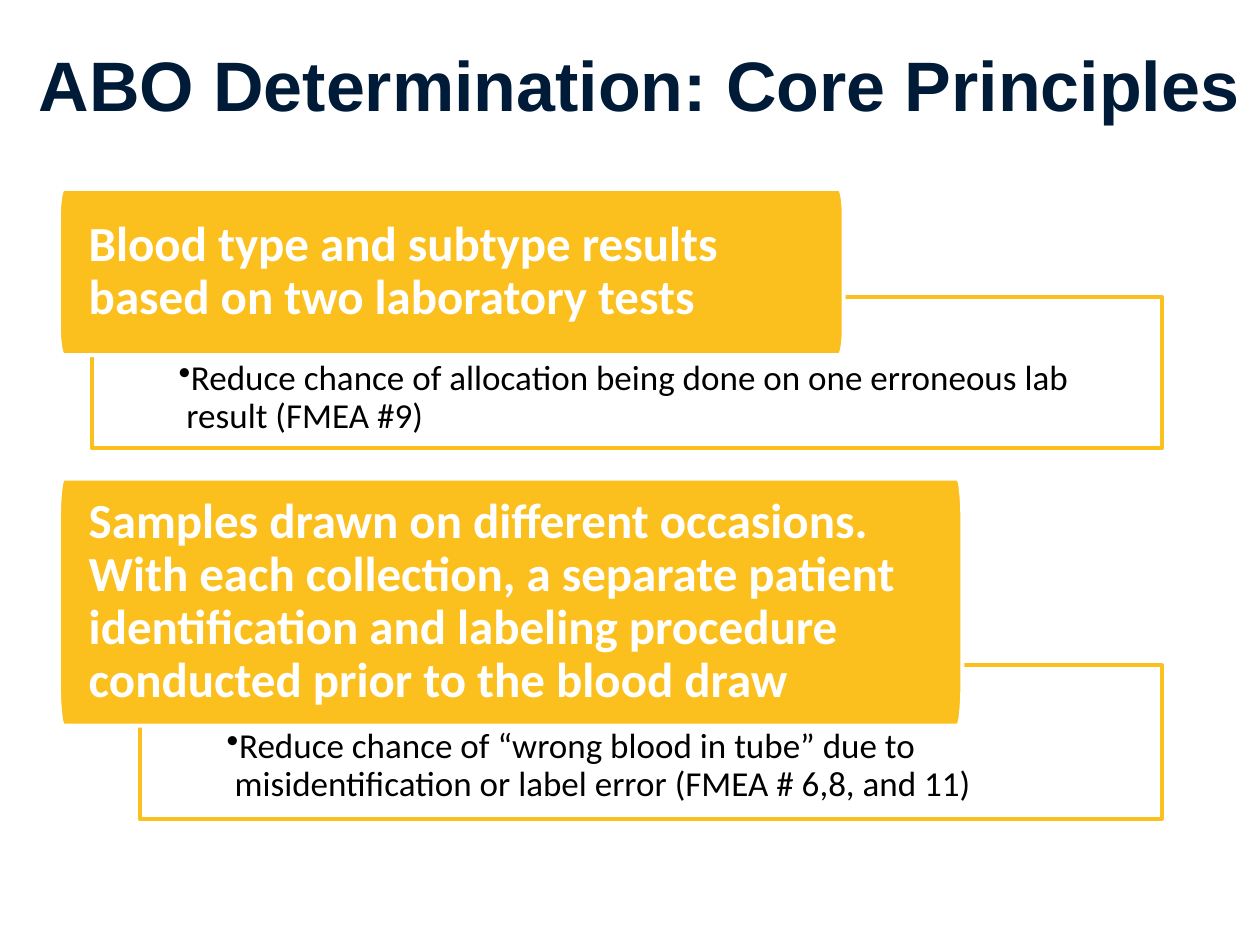
from math import cos, pi, sin

from lxml.etree import SubElement
from pptx import Presentation
from pptx.dml.color import RGBColor
from pptx.enum.shapes import MSO_SHAPE
from pptx.enum.text import MSO_ANCHOR, PP_ALIGN
from pptx.oxml.ns import qn
from pptx.util import Cm, Pt

NAVY, GOLD, WHITE, BLACK = "001B37", "FBC01E", "FFFFFF", "000000"
LEFT, RIGHT = 1.19, 23.42


def color(code):
    return RGBColor.from_string(code)


def write(shape, text, size, ink, font="Calibri", bold=False, bullet=False,
          anchor=MSO_ANCHOR.MIDDLE, pad=(0.25, 0.13, 0.25, 0.13), space=None):
    """Fill a shape with one paragraph; pad is left, top, right, bottom in cm."""
    frame = shape.text_frame
    frame.word_wrap = True
    frame.vertical_anchor = anchor
    (frame.margin_left, frame.margin_top,
     frame.margin_right, frame.margin_bottom) = map(Cm, pad)
    para = frame.paragraphs[0]
    para.text = text
    para.alignment = PP_ALIGN.LEFT
    if bullet:
        props = para._p.get_or_add_pPr()
        props.set("marL", str(Cm(0.16)))
        props.set("indent", str(Cm(-0.16)))
        SubElement(props, qn("a:buChar"), char="•")
    if space:
        para.line_spacing = space
    face = para.runs[0].font
    face.name, face.size, face.bold = font, Pt(size), bold
    face.color.rgb = color(ink)


class Deck:
    def __init__(self):
        self.prs = Presentation()
        self.prs.slide_width, self.prs.slide_height = Cm(25.4), Cm(19.05)
        self.slide = self.prs.slides.add_slide(self.prs.slide_layouts[5])

    def paint(self, shape, fill, line):
        shape.shadow.inherit = False
        shape.fill.solid()
        shape.fill.fore_color.rgb = color(fill)
        shape.line.color.rgb = color(line)
        shape.line.width = Pt(2.25)

    def title(self, text):
        shape = self.slide.shapes.title
        shape.left, shape.top = Cm(0.53), Cm(0.18)
        shape.width, shape.height = Cm(24.87), Cm(3.02)
        write(shape, text, 40, NAVY, font="Arial", bold=True)

    def detail(self, text, left, top, high):
        """Add an outlined box with a bullet, reaching to the right margin."""
        box = self.slide.shapes.add_shape(
            MSO_SHAPE.RECTANGLE, Cm(left), Cm(top), Cm(RIGHT - left), Cm(high))
        self.paint(box, WHITE, GOLD)
        write(box, text, 20, BLACK, bullet=True, anchor=MSO_ANCHOR.TOP,
              pad=(1.75, 1.28, 1.75, 0.13), space=0.9)

    def label(self, text, top, wide, high):
        """Add a gold panel whose corners are tall, narrow quarter ellipses."""
        rx, ry, steps = 0.09, high / 6, 8
        mid_x, mid_y = LEFT + wide / 2, top + high / 2
        points = []
        for turn, (sx, sy) in enumerate([(1, 1), (-1, 1), (-1, -1), (1, -1)]):
            for step in range(steps + 1):
                angle = (turn + step / steps) * pi / 2
                x = mid_x + sx * (wide / 2 - rx) + rx * cos(angle)
                y = mid_y + sy * (high / 2 - ry) + ry * sin(angle)
                points.append((Cm(x), Cm(y)))
        pen = self.slide.shapes.build_freeform(*points[0])
        pen.add_line_segments(points[1:], close=True)
        panel = pen.convert_to_shape()
        self.paint(panel, GOLD, WHITE)
        write(panel, text, 28, WHITE, bold=True,
              pad=(0.6, 0.03, 0.6, 0.03), space=0.9)


def main():
    deck = Deck()
    deck.title("ABO Determination: Core Principles")
    deck.detail("Reduce chance of allocation being done on one erroneous lab "
                "result (FMEA #9)", 1.85, 5.99, 3.05)
    deck.label("Blood type and subtype results based on two laboratory tests",
               3.81, 15.82, 3.35)
    deck.detail("Reduce chance of “wrong blood in tube” due to "
                "misidentification or label error (FMEA # 6,8, and 11)",
                2.82, 13.41, 3.1)
    deck.label("Samples drawn on different occasions. With each collection, "
               "a separate patient identification and labeling procedure "
               "conducted prior to the blood draw", 9.65, 18.21, 4.98)
    deck.prs.save("out.pptx")


if __name__ == "__main__":
    main()
